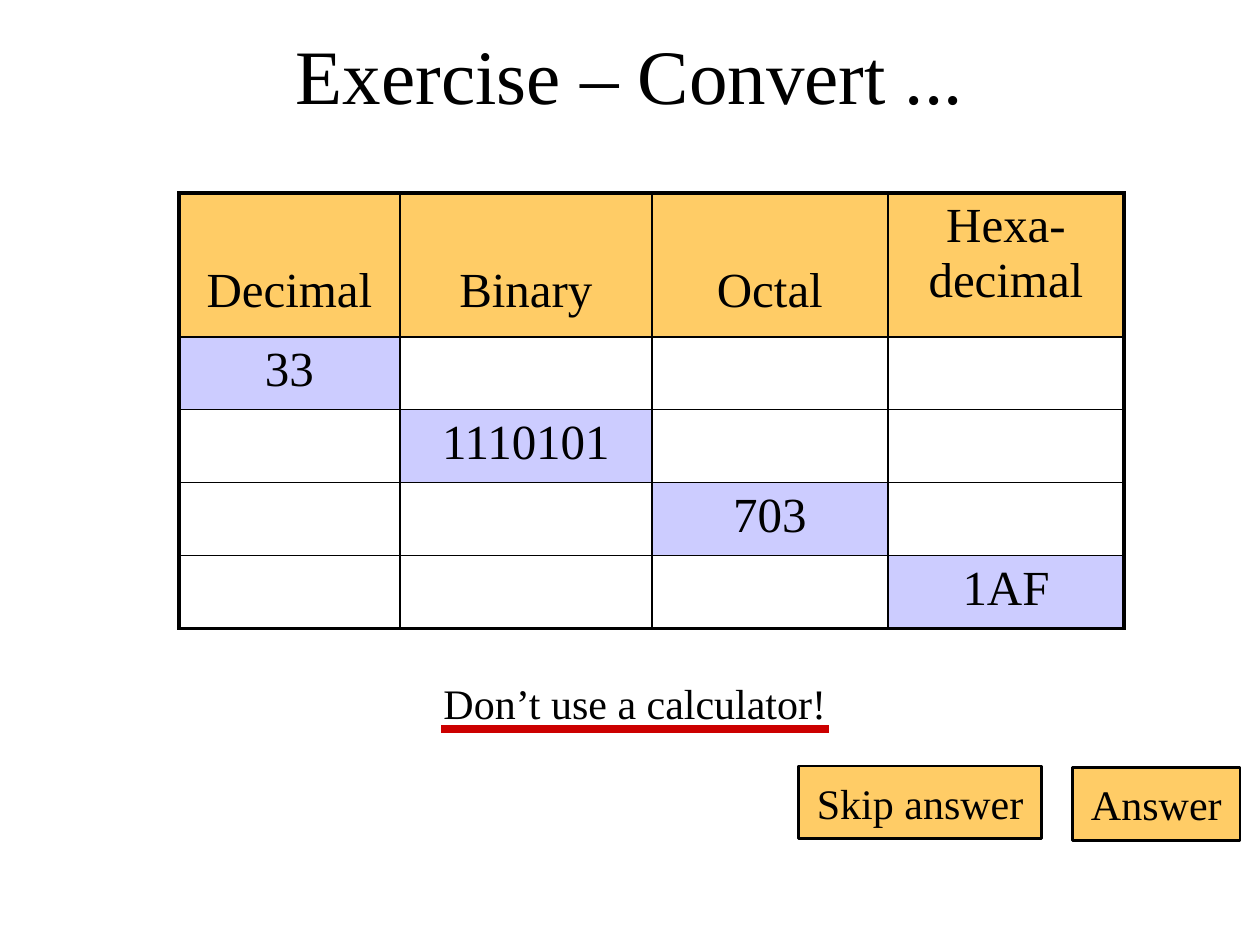
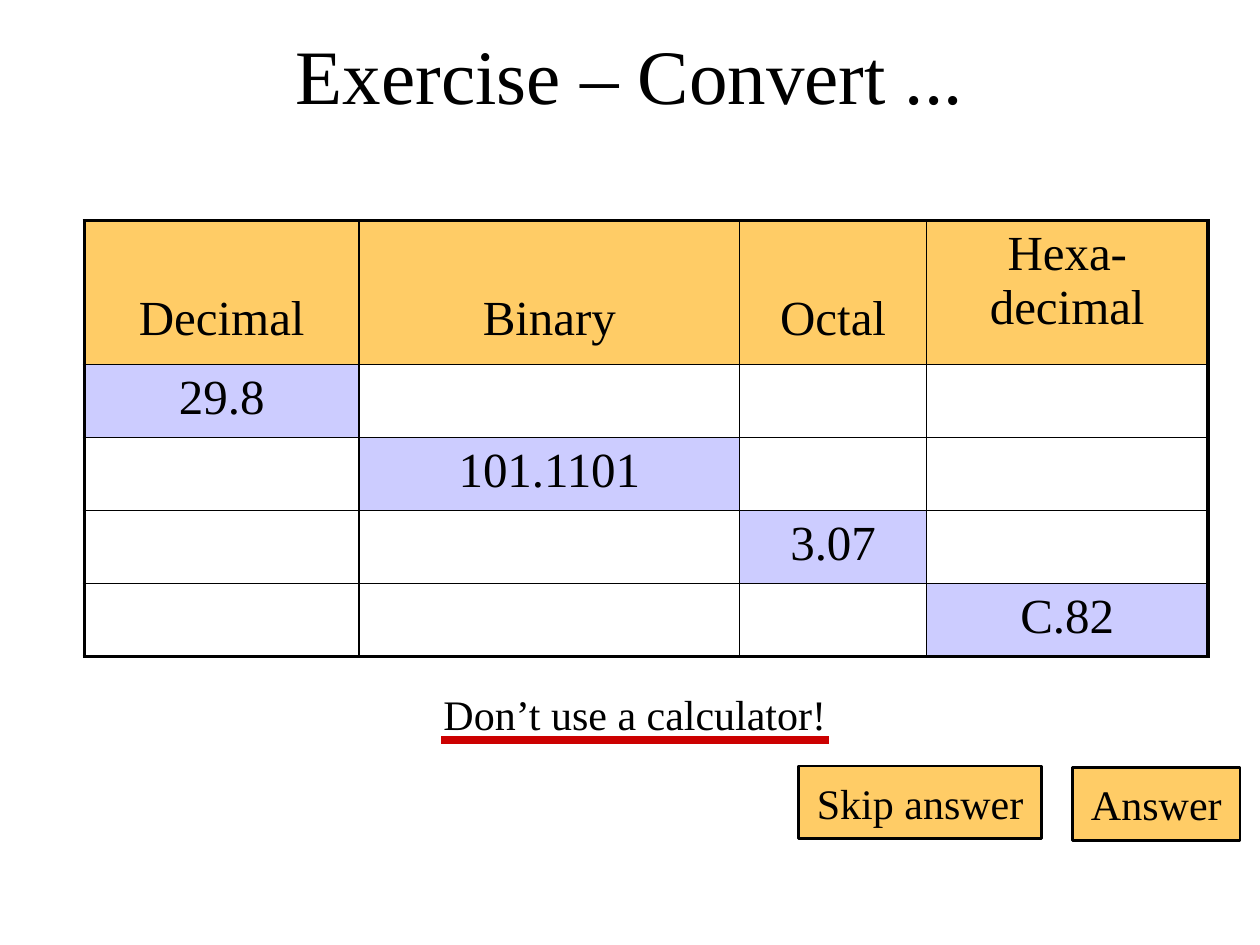
"""Builds two number-conversion exercise slides."""
from dataclasses import dataclass

from lxml import etree
from pptx import Presentation
from pptx import util as u
from pptx.dml.color import RGBColor
from pptx.enum import shapes, text
from pptx.oxml.ns import qn

COLORS = {"ink": "000000", "gold": "FFCC66", "lilac": "CCCCFF", "red": "CC0000"}
FONT = "Times New Roman"
HEADERS = ("Decimal", "Binary", "Octal", "Hexa-\ndecimal")
HEADER_HEIGHT, ROW_HEIGHT = 2.9, 1.47
THICK, THIN = 2.25, 1


@dataclass
class Exercise:
    left: float
    top: float
    widths: tuple[float, ...]
    givens: tuple[str, ...]
    note_top: float


@dataclass
class Button:
    label: str
    left: float
    top: float
    width: float


EXERCISES = (
    Exercise(3.61, 3.89, (4.45, 5.08, 4.76, 4.76), ("33", "1110101", "703", "1AF"), 13.54),
    Exercise(1.7, 4.45, (5.54, 7.67, 3.77, 5.67), ("29.8", "101.1101", "3.07", "C.82"), 13.76),
)
BUTTONS = (Button("Skip answer", 16.1, 15.44, 4.9), Button("Answer", 21.62, 15.47, 3.38))


def rgb(name: str) -> RGBColor:
    return RGBColor.from_string(COLORS[name])


def put_text(tf, content: str, size: float, align=text.PP_ALIGN.CENTER, color: str = "ink") -> None:
    p = tf.paragraphs[0]
    p.alignment = align
    for i, line in enumerate(content.split("\n")):
        if i:
            p.add_line_break()
        r = p.add_run()
        r.text = line
        r.font.name, r.font.size = FONT, u.Pt(size)
        r.font.color.rgb = rgb(color)


def add_title(s, content: str) -> None:
    sp = s.shapes.title
    sp.left, sp.top, sp.width, sp.height = u.Cm(1.9), u.Cm(0.43), u.Cm(21.59), u.Cm(2.11)
    sp.text_frame.vertical_anchor = text.MSO_ANCHOR.MIDDLE
    put_text(sp.text_frame, content, 44)


def add_note(s, content: str, top: float) -> None:
    group = s.shapes.add_group_shape()
    box = group.shapes.add_textbox(u.Cm(8.69), u.Cm(top), u.Cm(8.23), u.Cm(1.27))
    box.text_frame.word_wrap = False
    box.text_frame.auto_size = text.MSO_AUTO_SIZE.SHAPE_TO_FIT_TEXT
    put_text(box.text_frame, content, 24, align=text.PP_ALIGN.LEFT)
    y = u.Cm(top + 1.16)
    rule = group.shapes.add_connector(shapes.MSO_CONNECTOR.STRAIGHT, u.Cm(8.89), y, u.Cm(16.71), y)
    rule.line.color.rgb, rule.line.width = rgb("red"), u.Pt(4.5)
    etree.SubElement(rule.element.spPr, qn("a:effectLst"))


def set_borders(cell, **widths: float) -> None:
    tc_pr = cell._tc.get_or_add_tcPr()
    for i, side in enumerate("LRTB"):
        ln = etree.Element(qn(f"a:ln{side}"), w=str(u.Pt(widths[side])))
        fill = etree.SubElement(ln, qn("a:solidFill"))
        etree.SubElement(fill, qn("a:srgbClr"), val=COLORS["ink"])
        tc_pr.insert(i, ln)


def add_number_table(s, ex: Exercise) -> None:
    n = len(HEADERS)
    heights = [HEADER_HEIGHT] + [ROW_HEIGHT] * n
    frame = s.shapes.add_table(n + 1, n, u.Cm(ex.left), u.Cm(ex.top),
                               u.Cm(sum(ex.widths)), u.Cm(sum(heights)))
    table = frame.table
    table.first_row = table.horz_banding = False
    for column, width in zip(table.columns, ex.widths):
        column.width = u.Cm(width)
    for i, (row, height) in enumerate(zip(table.rows, heights)):
        row.height = u.Cm(height)
        for j, cell in enumerate(row.cells):
            is_header, is_given = i == 0, i == j + 1
            if is_header or is_given:
                cell.fill.solid()
                cell.fill.fore_color.rgb = rgb("gold" if is_header else "lilac")
                put_text(cell.text_frame, HEADERS[j] if is_header else ex.givens[j], 28)
            else:
                cell.fill.background()
            if is_header and "\n" not in HEADERS[j]:
                cell.vertical_anchor = text.MSO_ANCHOR.BOTTOM
                cell.margin_bottom = u.Cm(0.38)
            set_borders(cell, L=THIN if j else THICK, R=THICK if j == n - 1 else THIN,
                        T=THIN if i else THICK, B=THICK if i == n else THIN)


def add_button(s, button: Button) -> None:
    sp = s.shapes.add_shape(shapes.MSO_SHAPE.ACTION_BUTTON_CUSTOM, u.Cm(button.left),
                            u.Cm(button.top), u.Cm(button.width), u.Cm(1.47))
    sp.shadow.inherit = False
    sp.fill.solid()
    sp.fill.fore_color.rgb = rgb("gold")
    sp.line.color.rgb, sp.line.width = rgb("ink"), u.Pt(1.5)
    tf = sp.text_frame
    tf.word_wrap = False
    tf.auto_size = text.MSO_AUTO_SIZE.SHAPE_TO_FIT_TEXT
    tf.vertical_anchor = text.MSO_ANCHOR.MIDDLE
    put_text(tf, button.label, 24)


def main() -> None:
    prs = Presentation()
    prs.slide_width, prs.slide_height = u.Cm(25.4), u.Cm(19.05)
    for ex in EXERCISES:
        s = prs.slides.add_slide(prs.slide_layouts[5])
        add_title(s, "Exercise – Convert ...")
        add_note(s, "Don’t use a calculator!", ex.note_top)
        add_number_table(s, ex)
        for button in BUTTONS:
            add_button(s, button)
    prs.save("out.pptx")


if __name__ == "__main__":
    main()
